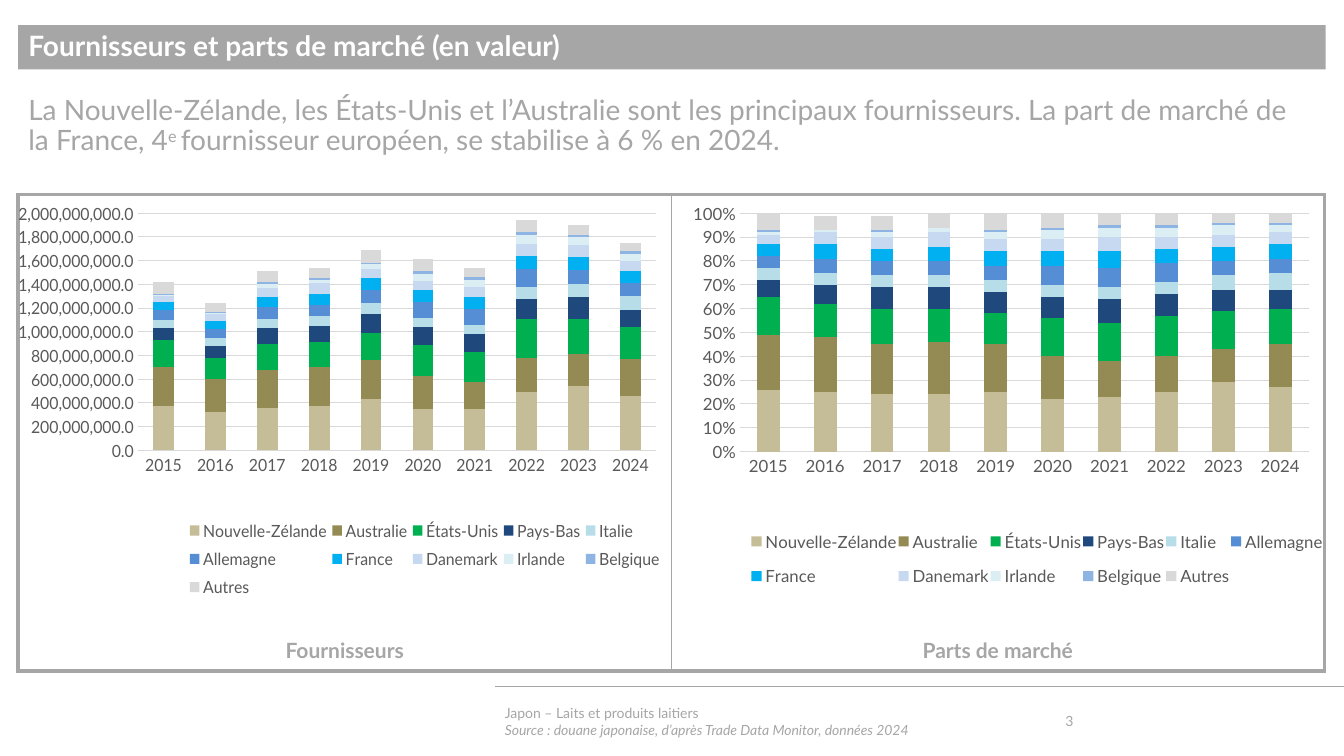
"""Build the slide on Japan's dairy suppliers and their market shares."""
import lxml.etree
import pptx
import pptx.chart.data
import pptx.dml.color
import pptx.enum.chart
import pptx.enum.shapes
import pptx.enum.text
import pptx.oxml
import pptx.oxml.ns
import pptx.util

Pt = pptx.util.Pt
RGBColor = pptx.dml.color.RGBColor
qn = pptx.oxml.ns.qn
PP_ALIGN = pptx.enum.text.PP_ALIGN
MSO_ANCHOR = pptx.enum.text.MSO_ANCHOR

GREY = RGBColor(0xA6, 0xA6, 0xA6)
WHITE = RGBColor(0xFF, 0xFF, 0xFF)
AXIS_TEXT = RGBColor(0x59, 0x59, 0x59)
GRID = RGBColor(0xD9, 0xD9, 0xD9)
COUNTRY_COLORS = {
    "Nouvelle-Zélande": RGBColor(0xC4, 0xBD, 0x97),
    "Australie": RGBColor(0x94, 0x8A, 0x54),
    "États-Unis": RGBColor(0x00, 0xB0, 0x50),
    "Pays-Bas": RGBColor(0x1F, 0x49, 0x7D),
    "Italie": RGBColor(0xB7, 0xDE, 0xE8),
    "Allemagne": RGBColor(0x55, 0x8E, 0xD5),
    "France": RGBColor(0x00, 0xB0, 0xF0),
    "Danemark": RGBColor(0xC6, 0xD9, 0xF1),
    "Irlande": RGBColor(0xDB, 0xEE, 0xF4),
    "Belgique": RGBColor(0x8E, 0xB4, 0xE3),
    "Autres": RGBColor(0xD9, 0xD9, 0xD9),
}
YEARS = [str(year) for year in range(2015, 2025)]
MILLION = 1_000_000
SALES_MILLIONS = [
    [370, 320, 360, 370, 430, 350, 350, 490, 540, 460],
    [330, 280, 320, 330, 330, 280, 230, 290, 270, 310],
    [230, 180, 220, 210, 230, 260, 250, 330, 300, 270],
    [100, 100, 130, 140, 160, 150, 150, 170, 180, 140],
    [70, 70, 80, 80, 90, 80, 80, 100, 110, 120],
    [80, 70, 100, 100, 110, 130, 130, 150, 120, 110],
    [70, 70, 80, 90, 100, 100, 100, 110, 110, 100],
    [50, 60, 80, 90, 80, 80, 90, 100, 100, 90],
    [10, 10, 30, 30, 40, 60, 60, 80, 70, 60],
    [10, 10, 20, 10, 10, 20, 20, 20, 20, 20],
    [100, 70, 90, 90, 110, 100, 80, 100, 80, 70],
]
SHARES_PERCENT = [
    [26, 25, 24, 24, 25, 22, 23, 25, 29, 27],
    [23, 23, 21, 22, 20, 18, 15, 15, 14, 18],
    [16, 14, 15, 14, 13, 16, 16, 17, 16, 15],
    [7, 8, 9, 9, 9, 9, 10, 9, 9, 8],
    [5, 5, 5, 5, 5, 5, 5, 5, 6, 7],
    [5, 6, 6, 6, 6, 8, 8, 8, 6, 6],
    [5, 6, 5, 6, 6, 6, 7, 6, 6, 6],
    [4, 5, 5, 6, 5, 5, 6, 5, 5, 5],
    [1, 1, 2, 2, 3, 4, 4, 4, 4, 3],
    [1, 0, 1, 0, 1, 1, 1, 1, 1, 1],
    [7, 6, 6, 6, 7, 6, 5, 5, 4, 4],
]
LEFT, PANEL_TOP, PANEL_WIDTH, PANEL_HEIGHT = 13, 139, 466.5, 340.5


class SlideBuilder:
    """Hold the style and the current slide, with one method per kind of element."""

    def __init__(self, slide, font_name="Lato"):
        self.slide = slide
        self.font_name = font_name

    def style(self, font, size, color, bold=False, italic=False):
        font.name, font.size = self.font_name, Pt(size)
        font.bold, font.italic = bold, italic
        font.color.rgb = color

    def placeholder(self, shape, box, runs, color, bold=False, anchor=MSO_ANCHOR.TOP, fill=None):
        shape.left, shape.top, shape.width, shape.height = map(Pt, box)
        if fill is not None:
            shape.fill.solid()
            shape.fill.fore_color.rgb = fill
        frame = shape.text_frame
        frame.auto_size = pptx.enum.text.MSO_AUTO_SIZE.NONE
        frame.vertical_anchor = anchor
        paragraph = frame.paragraphs[0]
        properties = paragraph._p.get_or_add_pPr()
        properties.set("marL", "0")
        properties.set("indent", "0")
        lxml.etree.SubElement(properties, qn("a:buNone"))
        paragraph.alignment = PP_ALIGN.LEFT
        paragraph.line_spacing = 0.9
        paragraph.space_before = Pt(0)
        self.style(paragraph.font, 20, color, bold)
        for text, baseline in runs:
            run = paragraph.add_run()
            run.text = text
            if baseline:
                run._r.get_or_add_rPr().set("baseline", str(baseline))

    def text(self, box, lines, size, bold=False, align=PP_ALIGN.LEFT, anchor=MSO_ANCHOR.TOP):
        frame = self.slide.shapes.add_textbox(*map(Pt, box)).text_frame
        frame.word_wrap = True
        frame.vertical_anchor = anchor
        for index, (line, italic) in enumerate(lines):
            paragraph = frame.add_paragraph() if index else frame.paragraphs[0]
            paragraph.text = line
            paragraph.alignment = align
            self.style(paragraph.font, size, GREY, bold, italic)

    def line(self, start, end, width):
        connector = self.slide.shapes.add_connector(
            pptx.enum.shapes.MSO_CONNECTOR.STRAIGHT, *map(Pt, start + end))
        connector.line.color.rgb = GREY
        connector.line.width = Pt(width)
        lxml.etree.SubElement(connector._element.spPr, qn("a:effectLst"))

    def table(self, box, border_widths):
        table = self.slide.shapes.add_table(1, len(border_widths), *map(Pt, box)).table
        table.first_row = table.horz_banding = False
        for cell, widths in zip(table.rows[0].cells, border_widths):
            properties = cell._tc.get_or_add_tcPr()
            for side, width in zip("LRTB", widths):
                border = lxml.etree.SubElement(properties, qn(f"a:ln{side}"), w=str(Pt(width)))
                solid = lxml.etree.SubElement(border, qn("a:solidFill"))
                lxml.etree.SubElement(solid, qn("a:srgbClr"), val=str(GREY))
            cell.fill.background()

    def manual_layout(self, parent, index, fractions, inner=False):
        for existing in parent.findall(qn("c:layout")):
            parent.remove(existing)
        layout = pptx.oxml.parse_xml(f'<c:layout {pptx.oxml.ns.nsdecls("c")}/>')
        manual = lxml.etree.SubElement(layout, qn("c:manualLayout"))
        settings = [("layoutTarget", "inner")] if inner else []
        settings += [("xMode", "edge"), ("yMode", "edge"), *zip("xywh", fractions)]
        for name, value in settings:
            lxml.etree.SubElement(manual, qn(f"c:{name}"), val=str(value))
        parent.insert(index, layout)

    def chart(self, box, rows, maximum, number_format, plot_area, legend_area):
        data = pptx.chart.data.CategoryChartData(number_format=number_format)
        data.categories = YEARS
        for country, values in zip(COUNTRY_COLORS, rows):
            data.add_series(country, values)
        chart = self.slide.shapes.add_chart(
            pptx.enum.chart.XL_CHART_TYPE.COLUMN_STACKED, *map(Pt, box), data).chart
        chart.has_title = False
        self.style(chart.font, 12, AXIS_TEXT)
        no_fill = pptx.oxml.parse_xml(
            f'<c:spPr {pptx.oxml.ns.nsdecls("c", "a")}><a:noFill/><a:ln><a:noFill/></a:ln></c:spPr>')
        chart._chartSpace.find(qn("c:chart")).addnext(no_fill)
        plot = chart.plots[0]
        plot.gap_width, plot.overlap, plot.vary_by_categories = 150, 100, False
        for series, color in zip(plot.series, COUNTRY_COLORS.values()):
            series.format.fill.solid()
            series.format.fill.fore_color.rgb = color
        for axis in (chart.category_axis, chart.value_axis):
            axis.major_tick_mark = axis.minor_tick_mark = pptx.enum.chart.XL_TICK_MARK.NONE
        value_axis = chart.value_axis
        value_axis.minimum_scale, value_axis.maximum_scale = 0, maximum
        value_axis.major_unit = maximum / 10
        value_axis.tick_labels.number_format = number_format
        value_axis.tick_labels.number_format_is_linked = False
        value_axis.format.line.fill.background()
        for line in (chart.category_axis.format.line, value_axis.major_gridlines.format.line):
            line.color.rgb = GRID
            line.width = Pt(0.75)
        chart.has_legend = True
        chart.legend.position = pptx.enum.chart.XL_LEGEND_POSITION.BOTTOM
        chart.legend.include_in_layout = False
        self.manual_layout(chart._chartSpace.find(".//" + qn("c:plotArea")), 0, plot_area, True)
        self.manual_layout(chart.legend._element, 1, legend_area)


def main():
    presentation = pptx.Presentation()
    presentation.slide_width, presentation.slide_height = Pt(960), Pt(540)
    slide = presentation.slides.add_slide(presentation.slide_layouts[1])
    builder = SlideBuilder(slide)
    title, body = slide.placeholders
    builder.placeholder(title, (LEFT, 18, 934, 31.5), [("Fournisseurs et parts de marché (en valeur)", 0)],
                        WHITE, bold=True, anchor=MSO_ANCHOR.MIDDLE, fill=GREY)
    builder.placeholder(body, (LEFT, 65, 933, 58), [
        ("La Nouvelle-Zélande, les États-Unis et l’Australie sont les principaux fournisseurs. "
         "La part de marché de la France, 4", 0),
        ("e ", 30000),
        ("fournisseur européen, se stabilise à 6 % en 2024.", 0)], GREY)
    builder.line((960, 490.5), (353.5, 490.5), 0.5)
    builder.table((LEFT, PANEL_TOP, 2 * PANEL_WIDTH, PANEL_HEIGHT), [(3, 1, 3, 3), (1, 3, 3, 3)])
    sales = [[value * MILLION for value in row] for row in SALES_MILLIONS]
    shares = [[value / 100 for value in row] for row in SHARES_PERCENT]
    panels = [
        ("Fournisseurs", sales, 2000 * MILLION, "#,##0.0", (0.134, 0.044, 0.842, 0.56), (0.21, 0.75, 0.78, 0.22)),
        ("Parts de marché", shares, 1, "0%", (0.105, 0.044, 0.871, 0.563), (0.12, 0.76, 0.88, 0.2)),
    ]
    for index, (label, *chart_settings) in enumerate(panels):
        left = LEFT + index * PANEL_WIDTH
        builder.text((left, 451.5, PANEL_WIDTH, 25), [(label, False)], 15, bold=True, align=PP_ALIGN.CENTER)
        builder.chart((left, PANEL_TOP, PANEL_WIDTH, 302.5), *chart_settings)
    builder.text((353.5, 500.5, 391, 29), [
        ("Japon – Laits et produits laitiers", False),
        ("Source : douane japonaise, d’après Trade Data Monitor, données 2024", True)],
        10, anchor=MSO_ANCHOR.MIDDLE)
    builder.text((754, 500.5, 71, 29), [("3", False)], 10, anchor=MSO_ANCHOR.MIDDLE)
    presentation.save("out.pptx")


if __name__ == "__main__":
    main()
